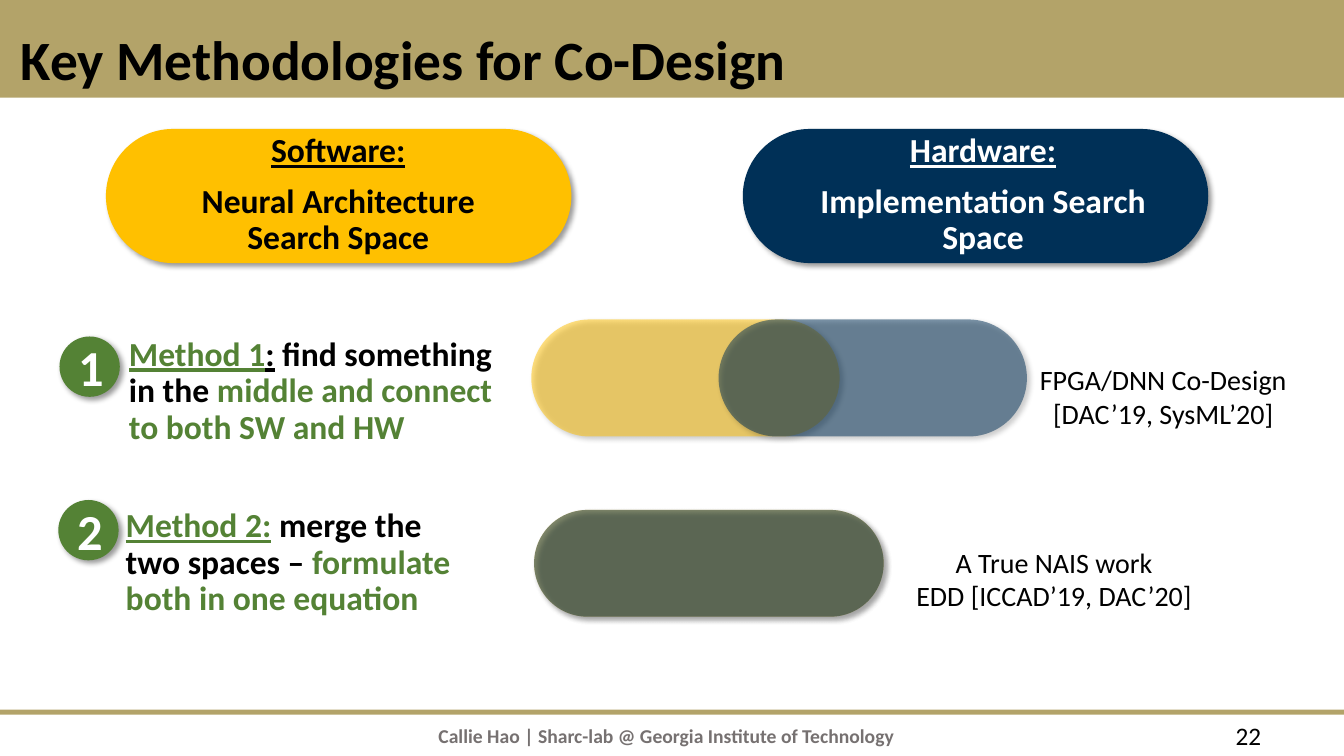
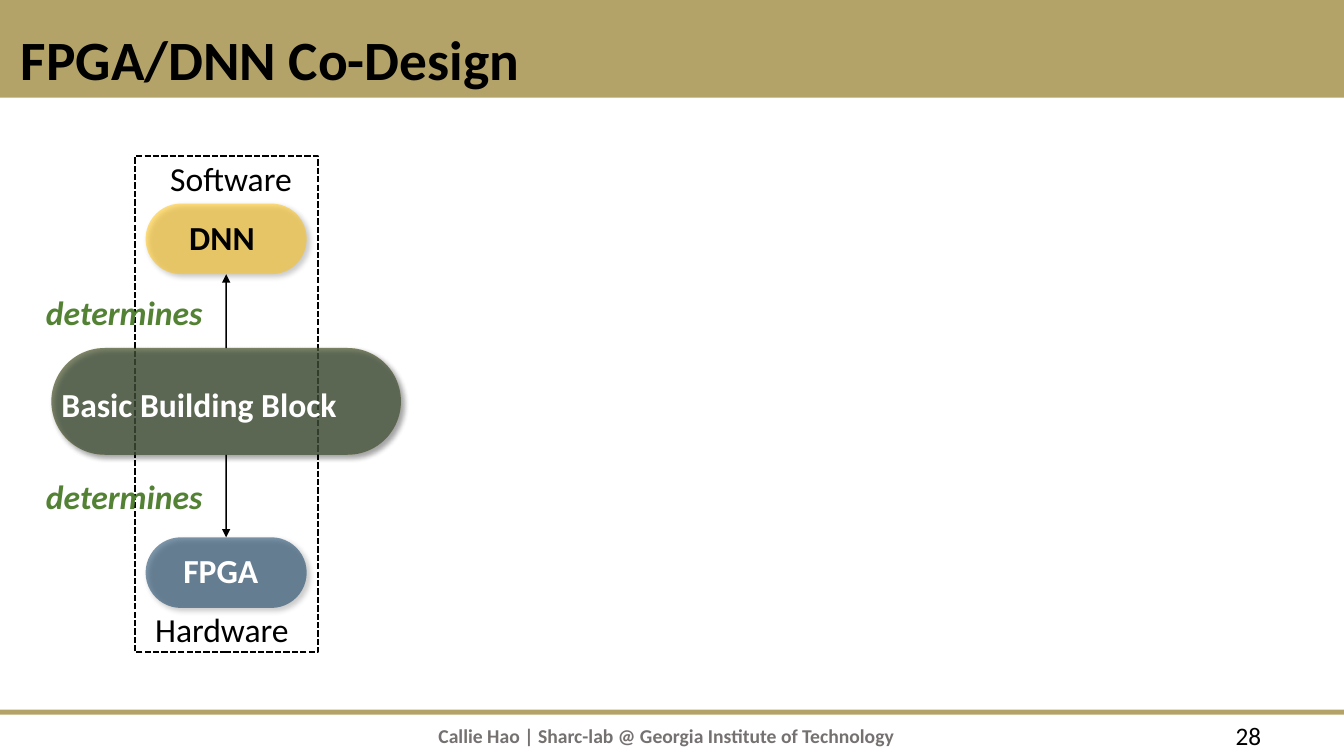
import pptx
import pptx.util
import pptx.dml.color
import pptx.enum.dml
import pptx.enum.shapes
import pptx.enum.text
import pptx.oxml.ns
from lxml import etree

Cm, Pt = pptx.util.Cm, pptx.util.Pt
SHAPES = pptx.enum.shapes.MSO_SHAPE
ANCHOR = pptx.enum.text.MSO_ANCHOR
ALIGN = pptx.enum.text.PP_ALIGN
qn = pptx.oxml.ns.qn

# Shared look
FONT = "Calibri"
GOLD, YELLOW, NAVY, GREEN = "B3A369", "FFC000", "003057", "548235"
BLACK, WHITE, GREY = "000000", "FFFFFF", "767171"
SLIDE_WIDTH, SLIDE_HEIGHT = 33.87, 19.05
FOOTER = "Callie Hao | Sharc-lab @ Georgia Institute of Technology"


def rgb(color):
    return pptx.dml.color.RGBColor.from_string(color)


def add_node(parent, tag, **attributes):
    node = etree.SubElement(parent, qn(tag))
    for name, value in attributes.items():
        node.set(name, str(value))
    return node


# Shapes
def add_filled(slide, kind, box, color, opacity=100, shadow=False):
    shape = slide.shapes.add_shape(kind, *map(Cm, box))
    shape.fill.solid()
    shape.fill.fore_color.rgb = rgb(color)
    shape.line.fill.background()
    shape.shadow.inherit = False
    properties = shape.element.spPr
    if opacity < 100:
        solid_color = properties.find(qn("a:solidFill"))[0]
        add_node(solid_color, "a:alpha", val=opacity * 1000)
    if shadow:
        outer = add_node(properties.find(qn("a:effectLst")), "a:outerShdw",
                         blurRad=Pt(4), dist=Pt(3), dir=45 * 60000,
                         algn="tl", rotWithShape=0)
        shadow_color = add_node(outer, "a:srgbClr", val=BLACK)
        add_node(shadow_color, "a:alpha", val=40000)
    return shape


def add_pill(slide, box, color, opacity=100):
    pill = add_filled(slide, SHAPES.ROUNDED_RECTANGLE, box, color, opacity, True)
    pill.adjustments[0] = 0.5
    return pill


def add_merged_pill(slide, box):
    """Lay the hardware colour over the software colour."""
    add_pill(slide, box, YELLOW, 50)
    return add_pill(slide, box, NAVY, 50)


def add_badge(slide, left, top, number):
    badge = add_filled(slide, SHAPES.OVAL, (left, top, 1.52, 1.52), GREEN, shadow=True)
    badge.text_frame.vertical_anchor = ANCHOR.MIDDLE
    paragraph = badge.text_frame.paragraphs[0]
    paragraph.text = number
    paragraph.alignment = ALIGN.CENTER
    set_font(paragraph.font, 36, WHITE, True)


def add_dashed_frame(slide, box):
    frame = slide.shapes.add_shape(SHAPES.RECTANGLE, *map(Cm, box))
    frame.fill.background()
    frame.line.color.rgb = rgb(BLACK)
    frame.line.width = Pt(1.5)
    frame.line.dash_style = pptx.enum.dml.MSO_LINE.SQUARE_DOT
    frame.shadow.inherit = False


def add_arrow(slide, start, start_side, end, end_side):
    arrow = slide.shapes.add_connector(
        pptx.enum.shapes.MSO_CONNECTOR.STRAIGHT, 0, 0, 0, 0)
    arrow.begin_connect(start, start_side)
    arrow.end_connect(end, end_side)
    arrow.line.color.rgb = rgb(BLACK)
    arrow.line.width = Pt(1)
    add_node(arrow.line._get_or_add_ln(), "a:tailEnd", type="triangle")
    add_node(arrow.element.spPr, "a:effectLst")


# Text
def set_font(font, size, color=None, bold=False, italic=False):
    font.name = FONT
    font.size = Pt(size)
    font.bold = bold
    font.italic = italic
    if color:
        font.color.rgb = rgb(color)


def add_text(slide, box, lines, size=24, color=BLACK, bold=False, italic=False,
             align=ALIGN.LEFT, anchor=ANCHOR.TOP, spacing=0.9, gap=0):
    text_box = slide.shapes.add_textbox(*map(Cm, box))
    frame = text_box.text_frame
    frame.word_wrap = True
    frame.vertical_anchor = anchor
    for index, line in enumerate(lines):
        paragraph = frame.paragraphs[0] if index == 0 else frame.add_paragraph()
        paragraph.text = line
        paragraph.alignment = align
        paragraph.line_spacing = spacing
        if index and gap:
            paragraph.space_before = Pt(gap)
        set_font(paragraph.font, size, color, bold, italic)
    return frame.paragraphs


def add_label(slide, box, text, **style):
    add_text(slide, box, [text], anchor=ANCHOR.MIDDLE, **style)


def add_space_heading(slide, box, heading, name, color):
    paragraphs = add_text(slide, box, [heading, name], color=color, bold=True,
                          align=ALIGN.CENTER, gap=10)
    paragraphs[0].font.underline = True


def add_method(slide, box, runs):
    paragraph = add_text(slide, box, [""], color=None, bold=True)[0]
    for text, color, underline in runs:
        run = paragraph.add_run()
        run.text = text
        run.font.color.rgb = rgb(color)
        run.font.underline = underline


def add_citation(slide, box, lines):
    add_text(slide, box, lines, size=20, align=ALIGN.CENTER, spacing=1)


# Slides
def add_base_slide(presentation, title, number):
    slide = presentation.slides.add_slide(presentation.slide_layouts[6])
    for top, height in ((17.88, 0.13), (0, 2.46)):
        add_filled(slide, SHAPES.RECTANGLE, (0, top, SLIDE_WIDTH, height), GOLD)
    add_text(slide, (10.8, 18.11, 12.98, 0.84), [FOOTER], size=14, color=GREY,
             bold=True, spacing=1)
    add_text(slide, (30.89, 18.03, 1.98, 0.84), [number], size=18, spacing=1)
    add_label(slide, (0.28, 0.71, 31.45, 1.73), title, size=39.6, bold=True)
    return slide


def build_methodologies(presentation):
    slide = add_base_slide(presentation, "Key Methodologies for Co-Design", "22")

    # Search spaces
    add_pill(slide, (2.67, 3.25, 11.73, 3.38), YELLOW)
    add_space_heading(slide, (4.32, 3.25, 8.41, 3.38), "Software:",
                      "Neural Architecture Search Space", BLACK)
    add_pill(slide, (18.72, 3.25, 11.73, 3.38), NAVY)
    add_space_heading(slide, (19.86, 3.25, 9.83, 3.38), "Hardware:",
                      "Implementation Search Space", WHITE)

    # Method 1: overlapping spaces
    for left, color in ((13.39, YELLOW), (18.11, NAVY)):
        add_pill(slide, (left, 8.05, 7.77, 2.95), color, 50)
    add_method(slide, (3, 8.38, 9.96, 3.02), [
        ("Method 1", GREEN, True),
        (":", BLACK, True),
        (" find something in the ", BLACK, False),
        ("middle and connect to both SW and HW", GREEN, False),
    ])
    add_citation(slide, (25.43, 9.02, 7.77, 1.96),
                 ["FPGA/DNN Co-Design [DAC’19, SysML’20]"])
    add_badge(slide, 1.5, 8.48, "1")

    # Method 2: merged spaces
    add_merged_pill(slide, (13.46, 12.85, 8.81, 2.69))
    add_method(slide, (2.92, 12.7, 9.47, 3.02), [
        ("Method 2:", GREEN, True),
        (" merge the two spaces – ", BLACK, False),
        ("formulate both in one equation", GREEN, False),
    ])
    add_citation(slide, (21.69, 13.61, 9.75, 1.96),
                 ["A True NAIS work", "EDD [ICCAD’19, DAC’20]"])
    add_badge(slide, 1.47, 12.6, "2")


def build_co_design(presentation):
    slide = add_base_slide(presentation, "FPGA/DNN Co-Design", "28")
    add_dashed_frame(slide, (3.4, 3.94, 4.62, 12.5))

    # Pills on one vertical axis
    axis, pill_width, block_width = 5.7, 4.06, 8.81
    pill_left = axis - pill_width / 2
    dnn = add_pill(slide, (pill_left, 5.13, pill_width, 1.78), YELLOW, 50)
    fpga = add_pill(slide, (pill_left, 13.54, pill_width, 1.78), NAVY, 50)
    block = add_merged_pill(slide, (axis - block_width / 2, 8.77, block_width, 2.69))
    add_arrow(slide, block, 0, dnn, 2)
    add_arrow(slide, block, 2, fpga, 0)

    # Labels
    for top in (7.14, 11.79):
        add_label(slide, (0.91, top, 6.55, 1.57), "determines",
                  color=GREEN, bold=True, italic=True)
    add_label(slide, (4.04, 3.58, 3.89, 1.93), "Software")
    add_label(slide, (3.66, 14.94, 4.27, 1.93), "Hardware")
    add_label(slide, (1.3, 9.45, 9.3, 1.57), "Basic Building Block",
              color=WHITE, bold=True)
    add_label(slide, (4.52, 5.08, 3.89, 1.93), "DNN", bold=True)
    add_label(slide, (4.37, 13.46, 3.89, 1.93), "FPGA", color=WHITE, bold=True)


def main():
    presentation = pptx.Presentation()
    presentation.slide_width = Cm(SLIDE_WIDTH)
    presentation.slide_height = Cm(SLIDE_HEIGHT)
    build_methodologies(presentation)
    build_co_design(presentation)
    presentation.save("out.pptx")


if __name__ == "__main__":
    main()
